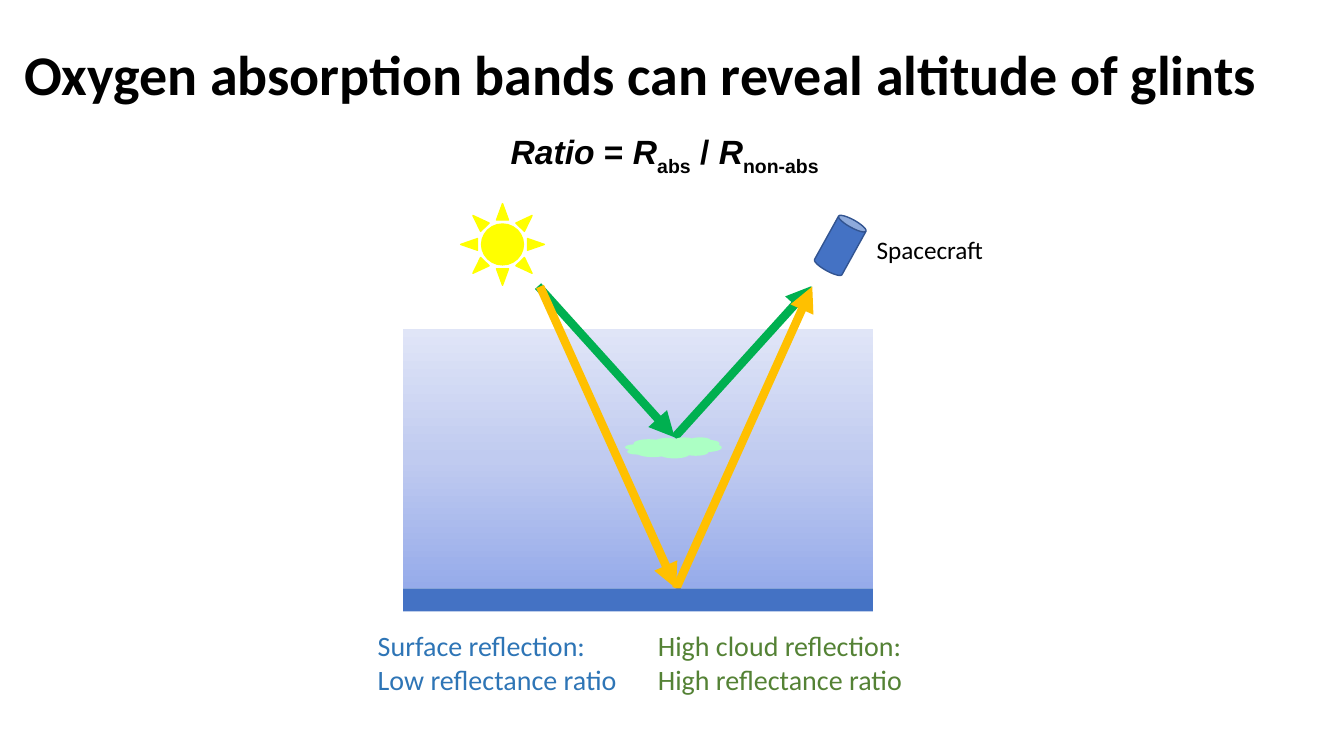
from copy import deepcopy
from dataclasses import dataclass
from itertools import pairwise

from lxml.etree import SubElement
from pptx import Presentation
from pptx.dml.color import RGBColor
from pptx.enum.shapes import MSO_CONNECTOR, MSO_SHAPE
from pptx.enum.text import MSO_ANCHOR, MSO_AUTO_SIZE, PP_ALIGN
from pptx.oxml.ns import qn
from pptx.util import Cm, Pt


@dataclass(frozen=True)
class Theme:
    body_font: str = "Calibri"
    formula_font: str = "Arial"
    title_size: int = 40
    formula_size: int = 24
    caption_size: int = 20
    label_size: int = 18
    ray_width: int = 6
    text: str = "000000"
    sun: str = "FFFF00"
    craft: str = "4472C4"
    craft_edge: str = "325491"
    ocean: str = "4472C4"
    air: tuple = ("96ABEA", "C0CBF0", "E0E5F7")
    cloud: str = "ACFFC4"
    cloud_ray: str = "00B050"
    surface_ray: str = "FFC000"
    surface_text: str = "2E75B6"
    cloud_text: str = "548235"


def rgb(color):
    return RGBColor.from_string(color)


class SlideBuilder:
    def __init__(self, prs, theme):
        self.theme = theme
        self.s = prs.slides.add_slide(prs.slide_layouts[5])

    def style(self, r, size, color, bold=False, font=None):
        r.font.name = font or self.theme.body_font
        r.font.size = Pt(size)
        r.font.bold = bold
        r.font.color.rgb = rgb(color)

    def title(self, text, x, y, w, h):
        sp = self.s.shapes.title
        sp.left, sp.top, sp.width, sp.height = Cm(x), Cm(y), Cm(w), Cm(h)
        tf = sp.text_frame
        tf.text = text
        tf.word_wrap = True
        tf.auto_size = MSO_AUTO_SIZE.NONE
        tf.vertical_anchor = MSO_ANCHOR.MIDDLE
        p = tf.paragraphs[0]
        p.alignment = PP_ALIGN.LEFT
        p.line_spacing = 0.9
        self.style(p.runs[0], self.theme.title_size, self.theme.text, bold=True)

    def text_box(self, x, y, w, h):
        tf = self.s.shapes.add_textbox(Cm(x), Cm(y), Cm(w), Cm(h)).text_frame
        tf.word_wrap = False
        tf.auto_size = MSO_AUTO_SIZE.SHAPE_TO_FIT_TEXT
        return tf

    def label(self, text, x, y, w, h, size, color):
        tf = self.text_box(x, y, w, h)
        tf.text = text
        for p in tf.paragraphs:
            self.style(p.runs[0], size, color)

    def formula(self, parts, x, y, w, h):
        """Parts are (text, kind) pairs; kind is "var", "sub" or "op"."""
        p = self.text_box(x, y, w, h).paragraphs[0]
        for text, kind in parts:
            r = p.add_run()
            r.text = text
            self.style(r, self.theme.formula_size, self.theme.text,
                       bold=True, font=self.theme.formula_font)
            r.font.italic = kind == "var"
            if kind == "sub":
                r._r.get_or_add_rPr().set("baseline", "-25000")

    def shape(self, kind, x, y, w, h, fill=None, line=None, rotation=0):
        sp = self.s.shapes.add_shape(kind, Cm(x), Cm(y), Cm(w), Cm(h))
        sp.shadow.inherit = False
        sp.rotation = rotation
        if fill:
            sp.fill.solid()
            sp.fill.fore_color.rgb = rgb(fill)
        if line:
            sp.line.color.rgb = rgb(line)
            sp.line.width = Pt(1)
        else:
            sp.line.fill.background()
        return sp

    def gradient_box(self, x, y, w, h, colors):
        """Fill a box with three evenly spaced colours, from bottom to top."""
        sp = self.shape(MSO_SHAPE.RECTANGLE, x, y, w, h)
        sp.fill.gradient()
        sp.fill.gradient_angle = 90
        first = sp._element.spPr.find(".//" + qn("a:gs"))
        first.addnext(deepcopy(first))
        for i, (stop, color) in enumerate(zip(sp.fill.gradient_stops, colors)):
            stop.position = i / (len(colors) - 1)
            stop.color.rgb = rgb(color)

    def ray(self, points, color):
        """Draw one arrow along each leg between successive points."""
        for (x1, y1), (x2, y2) in pairwise(points):
            c = self.s.shapes.add_connector(
                MSO_CONNECTOR.STRAIGHT, Cm(x1), Cm(y1), Cm(x2), Cm(y2))
            c.line.color.rgb = rgb(color)
            c.line.width = Pt(self.theme.ray_width)
            SubElement(c.line._get_or_add_ln(), qn("a:tailEnd"), type="triangle")
            SubElement(c._element.spPr, qn("a:effectLst"))


def main():
    prs = Presentation()
    prs.slide_width, prs.slide_height = Cm(33.87), Cm(19.05)
    t = Theme()
    b = SlideBuilder(prs, t)
    air_x, air_y, air_w, air_h = 10.16, 8.28, 11.84, 6.55
    ocean_y = air_y + air_h

    b.title("Oxygen absorption bands can reveal altitude of glints",
            0.36, 0.1, 33.22, 3.68)
    b.gradient_box(air_x, air_y, air_w, air_h, t.air)
    b.ray([(13.56, 7.21), (17, 11.02), (20.45, 7.21)], t.cloud_ray)
    b.shape(MSO_SHAPE.SUN, 11.61, 5.13, 2.11, 2.06, t.sun, t.sun)
    b.shape(MSO_SHAPE.CAN, 20.78, 5.46, 0.79, 1.45, t.craft, t.craft_edge, 29)
    b.label("Spacecraft", 21.84, 5.77, 3.23, 1.02, t.label_size, t.text)
    b.ray([(13.61, 7.22), (17.04, ocean_y), (20.47, 7.22)], t.surface_ray)
    for text, x, w, color in (
        ("Surface reflection:\nLow reflectance ratio", 9.27, 6.6, t.surface_text),
        ("High cloud reflection:\nHigh reflectance ratio", 16.33, 6.73, t.cloud_text),
    ):
        b.label(text, x, 15.72, w, 1.96, t.caption_size, color)
    b.shape(MSO_SHAPE.CLOUD, 15.75, 11.02, 2.44, 0.53, t.cloud)
    b.shape(MSO_SHAPE.RECTANGLE, air_x, ocean_y, air_w, 0.58, t.ocean)
    b.formula([("Ratio", "var"), (" = ", "op"), ("R", "var"), ("abs", "sub"),
               (" / ", "op"), ("R", "var"), ("non-abs", "sub")],
              12.62, 3.18, 8.99, 1.27)
    prs.save("out.pptx")


if __name__ == "__main__":
    main()
